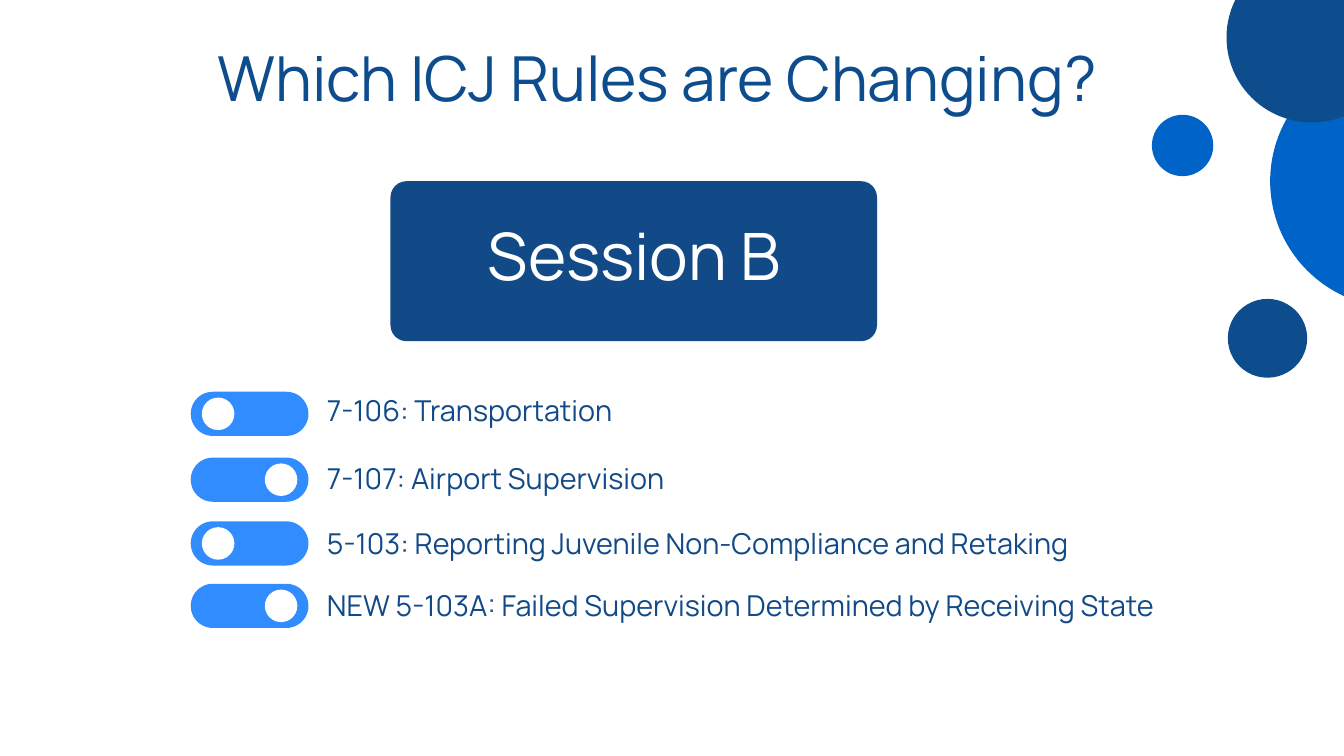
from pptx import Presentation
from pptx.dml.color import RGBColor
from pptx.enum.shapes import MSO_SHAPE
from pptx.enum.text import MSO_ANCHOR, MSO_AUTO_SIZE, PP_ALIGN
from pptx.util import Cm, Pt

FONT = "Manrope"
NAVY = "0E4D8D"
DEEP_BLUE = "124A87"
BRIGHT_BLUE = "0063C8"
TOGGLE_BLUE = "308CFF"
WHITE = "FFFFFF"

TOGGLE_LEFT, TOGGLE_WIDTH, TOGGLE_HEIGHT = 7.21, 4.45, 1.67
KNOB_SIZE, KNOB_INSET = 1.23, 0.42
RULE_LEFT, RULE_WIDTH = 12.36, 36.5

RULES = [
    (14.81, 14.63, False, "7-106: Transportation"),
    (17.3, 17.22, True, "7-107: Airport Supervision"),
    (19.71, 19.66, False, "5-103: Reporting Juvenile Non-Compliance and Retaking"),
    (22.07, 22.02, True, "NEW 5-103A: Failed Supervision Determined by Receiving State"),
]

BUBBLES = [
    (48.01, 2.06, 9.63, 9.58, BRIGHT_BLUE),
    (46.36, -1.8, 6.45, 6.43, NAVY),
    (43.54, 4.34, 2.32, 2.32, BRIGHT_BLUE),
    (46.41, 11.3, 3, 2.98, NAVY),
]


def color(hex_code):
    """Turn a hex string into a colour."""
    return RGBColor.from_string(hex_code)


def write(frame, text, size, leading, hex_code, align=PP_ALIGN.LEFT):
    """Fill a text frame with one formatted line."""
    frame.word_wrap = True
    frame.auto_size = MSO_AUTO_SIZE.NONE
    frame.vertical_anchor = MSO_ANCHOR.TOP
    frame.margin_left = frame.margin_right = 0
    frame.margin_top = frame.margin_bottom = 0
    line = frame.paragraphs[0]
    line.alignment = align
    line.line_spacing = Pt(leading)
    run = line.add_run()
    run.text = text
    run.font.name = FONT
    run.font.size = Pt(size)
    run.font.color.rgb = color(hex_code)


def add_title(slide, text):
    """Place and fill the slide title."""
    title = slide.shapes.title
    title.left, title.top = Cm(5.31), Cm(1.04)
    title.width, title.height = Cm(39.04), Cm(3.35)
    write(title.text_frame, text, 66.5, 93, NAVY, PP_ALIGN.CENTER)


def add_label(slide, left, top, width, height, *style):
    """Add a text box."""
    label = slide.shapes.add_textbox(Cm(left), Cm(top), Cm(width), Cm(height))
    write(label.text_frame, *style)


def add_solid(slide, preset, left, top, width, height, hex_code):
    """Add a filled shape without outline or shadow."""
    solid = slide.shapes.add_shape(preset, Cm(left), Cm(top), Cm(width), Cm(height))
    solid.fill.solid()
    solid.fill.fore_color.rgb = color(hex_code)
    solid.line.fill.background()
    solid.shadow.inherit = False
    return solid


def add_toggle(slide, top, knob_right):
    """Add a switch with its knob at the left or right end."""
    track = add_solid(slide, MSO_SHAPE.ROUNDED_RECTANGLE, TOGGLE_LEFT, top,
                      TOGGLE_WIDTH, TOGGLE_HEIGHT, TOGGLE_BLUE)
    track.adjustments[0] = 0.5
    travel = TOGGLE_WIDTH - KNOB_SIZE - 2 * KNOB_INSET if knob_right else 0
    add_solid(slide, MSO_SHAPE.OVAL, TOGGLE_LEFT + KNOB_INSET + travel,
              top + (TOGGLE_HEIGHT - KNOB_SIZE) / 2, KNOB_SIZE, KNOB_SIZE, WHITE)


def add_session_card(slide, text):
    """Add the rounded session card and its heading."""
    card = add_solid(slide, MSO_SHAPE.ROUNDED_RECTANGLE, 14.76, 6.85, 18.39, 6.05, DEEP_BLUE)
    card.adjustments[0] = 0.1
    add_label(slide, 13.34, 7.65, 21.26, 3.48, text, 70, 98, WHITE, PP_ALIGN.CENTER)


def main():
    """Build and save the slide."""
    deck = Presentation()
    deck.slide_width, deck.slide_height = Cm(50.8), Cm(28.58)
    slide = deck.slides.add_slide(deck.slide_layouts[5])
    add_title(slide, "Which ICJ Rules are Changing?")
    for toggle_top, rule_top, knob_right, rule in RULES:
        add_toggle(slide, toggle_top, knob_right)
        add_label(slide, RULE_LEFT, rule_top, RULE_WIDTH, 1.55, rule, 30.8, 43.1, DEEP_BLUE)
    for *bounds, hex_code in BUBBLES:
        add_solid(slide, MSO_SHAPE.OVAL, *bounds, hex_code)
    add_session_card(slide, "Session B")
    deck.save("out.pptx")


if __name__ == "__main__":
    main()
